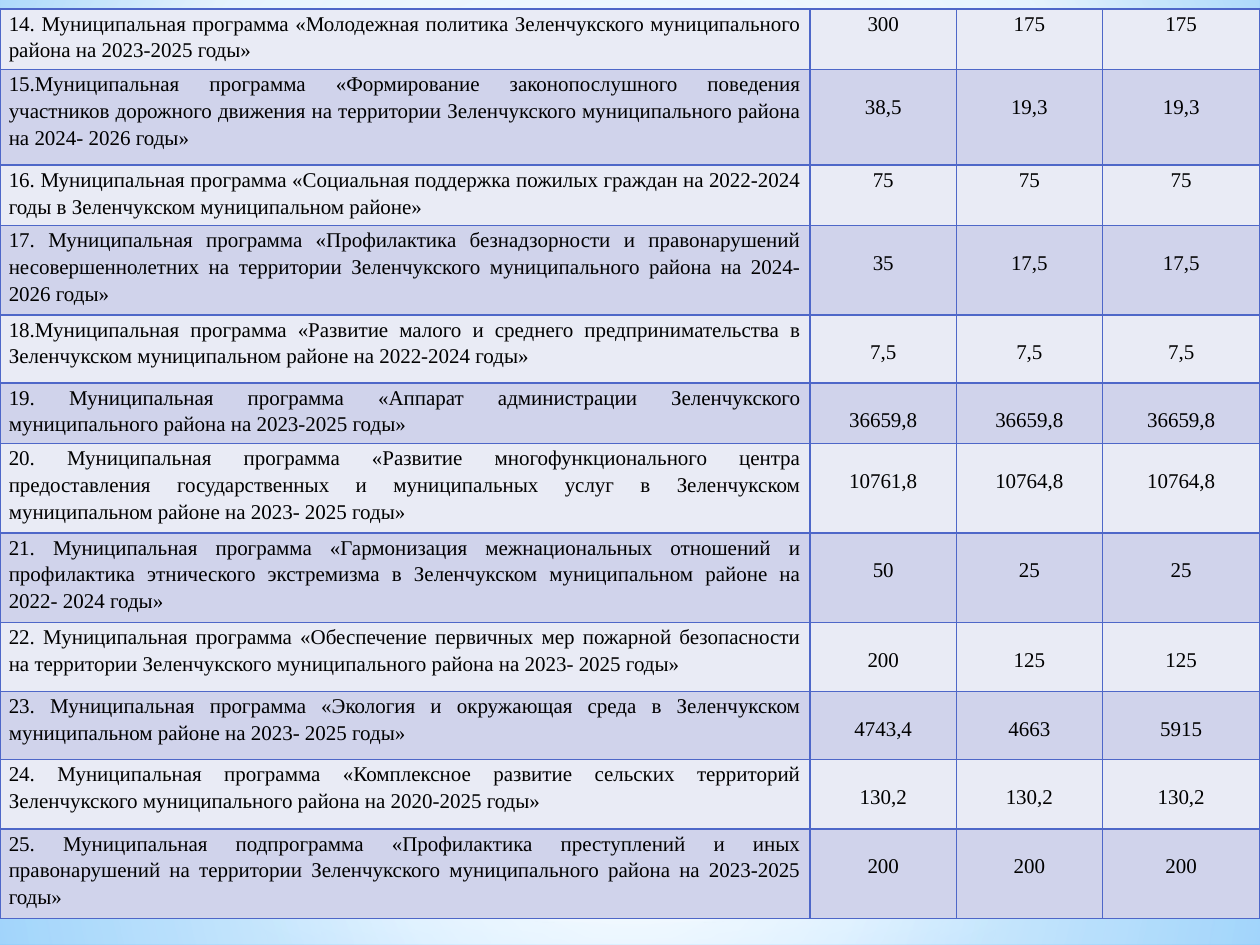
from lxml.etree import SubElement
from pptx import Presentation
from pptx.dml.color import RGBColor
from pptx.enum.shapes import MSO_SHAPE
from pptx.enum.text import PP_ALIGN
from pptx.oxml.ns import qn
from pptx.util import Inches, Pt

COLUMN_WIDTHS = [6.43, 1.16, 1.16, 1.25]
# Row height, space above the figures, programme, three yearly figures
PROGRAMMES = [
    (0.48, 0, "14. Муниципальная программа «Молодежная политика Зеленчукского муниципального района на 2023-2025 годы»",
     "300", "175", "175"),
    (0.76, 0.18, "15.Муниципальная программа «Формирование законопослушного поведения участников дорожного движения "
     "на территории Зеленчукского муниципального района на 2024- 2026 годы»", "38,5", "19,3", "19,3"),
    (0.48, 0, "16. Муниципальная программа «Социальная поддержка пожилых граждан на 2022-2024 годы "
     "в Зеленчукском муниципальном районе»", "75", "75", "75"),
    (0.71, 0.18, "17. Муниципальная программа «Профилактика безнадзорности и правонарушений несовершеннолетних "
     "на территории Зеленчукского муниципального района на 2024-2026 годы»", "35", "17,5", "17,5"),
    (0.54, 0.18, "18.Муниципальная программа «Развитие малого и среднего предпринимательства "
     "в Зеленчукском муниципальном районе на 2022-2024 годы»", "7,5", "7,5", "7,5"),
    (0.48, 0.18, "19. Муниципальная программа «Аппарат администрации Зеленчукского муниципального района "
     "на 2023-2025 годы»", "36659,8", "36659,8", "36659,8"),
    (0.71, 0.18, "20. Муниципальная программа «Развитие многофункционального центра предоставления государственных "
     "и муниципальных услуг в Зеленчукском муниципальном районе на 2023- 2025 годы»",
     "10761,8", "10764,8", "10764,8"),
    (0.71, 0.18, "21. Муниципальная программа «Гармонизация межнациональных отношений и профилактика этнического "
     "экстремизма в Зеленчукском муниципальном районе на 2022- 2024 годы»", "50", "25", "25"),
    (0.55, 0.18, "22. Муниципальная программа «Обеспечение первичных мер пожарной безопасности на территории "
     "Зеленчукского муниципального района на 2023- 2025 годы»", "200", "125", "125"),
    (0.54, 0.18, "23. Муниципальная программа «Экология и окружающая среда в Зеленчукском муниципальном районе "
     "на 2023- 2025 годы»", "4743,4", "4663", "5915"),
    (0.55, 0.18, "24. Муниципальная программа «Комплексное развитие сельских территорий "
     "Зеленчукского муниципального района на 2020-2025 годы»", "130,2", "130,2", "130,2"),
    (0.71, 0.18, "25. Муниципальная подпрограмма «Профилактика преступлений и иных правонарушений на территории "
     "Зеленчукского муниципального района на 2023-2025 годы»", "200", "200", "200"),
]


def color(value):
    return RGBColor.from_string(value)


def write_text(text_frame, text, size=12, font="Times New Roman", fill="000000",
               align=PP_ALIGN.CENTER, line_spacing=1.15):
    paragraph = text_frame.paragraphs[0]
    paragraph.alignment = align
    paragraph.line_spacing = line_spacing
    run = paragraph.add_run()
    run.text = text
    run.font.size = Pt(size)
    run.font.name = font
    run.font.color.rgb = color(fill)


def set_gradient(fill, element, stops, center=None):
    """Fill with (position, colour, opacity) stops: around center, or top to bottom without one."""
    fill.gradient()
    gradient = element.find(".//" + qn("a:gradFill"))
    for child in list(gradient):
        gradient.remove(child)
    stop_list = SubElement(gradient, qn("a:gsLst"))
    for position, value, opacity in stops:
        stop = SubElement(stop_list, qn("a:gs"), pos=str(position * 1000))
        stop_color = SubElement(stop, qn("a:srgbClr"), val=value)
        if opacity < 100:
            SubElement(stop_color, qn("a:alpha"), val=str(opacity * 1000))
    if center:
        path = SubElement(gradient, qn("a:path"), path="circle")
        sides = {side: str(share * 1000) for side, share in zip("ltrb", center)}
        SubElement(path, qn("a:fillToRect"), **sides)
    else:
        SubElement(gradient, qn("a:lin"), ang="5400000", scaled="0")


class BudgetSlide:
    border_color = "4E67C8"
    band_colors = ("E9EBF5", "D0D3EB")

    def __init__(self, slide):
        self.slide = slide

    def background(self, stops, center):
        background = self.slide.background
        set_gradient(background.fill, self.slide.element, stops, center)

    def glow(self, kind, top, height, stops, center=None):
        """Add a full-width translucent layer."""
        shape = self.slide.shapes.add_shape(kind, 0, Inches(top), Inches(10), Inches(height))
        shape.shadow.inherit = False
        shape.line.fill.background()
        set_gradient(shape.fill, shape.element, stops, center)

    def border(self, cell):
        properties = cell._tc.get_or_add_tcPr()
        for side in "LRTB":
            line = SubElement(properties, qn(f"a:ln{side}"), w=str(Pt(1)))
            fill = SubElement(line, qn("a:solidFill"))
            SubElement(fill, qn("a:srgbClr"), val=self.border_color)

    def cell(self, cell, text, band, align, margin_top):
        self.border(cell)
        cell.fill.solid()
        cell.fill.fore_color.rgb = color(self.band_colors[band])
        cell.margin_left = cell.margin_right = Inches(0.07)
        cell.margin_top = Inches(margin_top)
        cell.margin_bottom = 0
        write_text(cell.text_frame, text, align=align)

    def table(self, top, programmes):
        height = sum(programme[0] for programme in programmes)
        table = self.slide.shapes.add_table(len(programmes), len(COLUMN_WIDTHS), 0, Inches(top),
                                            Inches(10), Inches(height)).table
        table.first_row = False
        table.horz_banding = False
        for column, width in zip(table.columns, COLUMN_WIDTHS):
            column.width = Inches(width)
        for index, (row_height, figure_margin, name, *figures) in enumerate(programmes):
            table.rows[index].height = Inches(row_height)
            self.cell(table.cell(index, 0), name, index % 2, PP_ALIGN.JUSTIFY, 0)
            for column, figure in enumerate(figures, 1):
                self.cell(table.cell(index, column), figure, index % 2, PP_ALIGN.CENTER, figure_margin)


def main():
    presentation = Presentation()
    presentation.slide_width = Inches(10)
    presentation.slide_height = Inches(7.5)
    budget = BudgetSlide(presentation.slides.add_slide(presentation.slide_layouts[6]))
    middle = (50, 50, 50, 50)
    budget.background([(0, "9ED5FF", 100), (60, "FFFFFF", 100), (100, "5BB9FF", 100)], (20, 10, 20, 60))
    budget.glow(MSO_SHAPE.RECTANGLE, 5.58, 1.92,
                [(0, "FFFFFF", 91), (37, "FFFFFF", 76), (100, "B4DCFA", 79)], middle)
    budget.glow(MSO_SHAPE.RECTANGLE, 0, 5.58,
                [(0, "FFFFFF", 89), (48, "FFFFFF", 62), (100, "B4DCFA", 79)], middle)
    budget.glow(MSO_SHAPE.RECTANGLE, 4.12, 2.5,
                [(0, "FFFFFF", 0), (29, "FFFFFF", 30), (45, "B4DCFA", 40),
                 (55, "FFFFFF", 26), (65, "B4DCFA", 60), (100, "FFFFFF", 0)])
    budget.glow(MSO_SHAPE.OVAL, 1.75, 5.58, [(0, "FFFFFF", 100), (56, "FFFFFF", 0)], middle)
    budget.table(0.07, PROGRAMMES)
    presentation.save("out.pptx")


if __name__ == "__main__":
    main()
